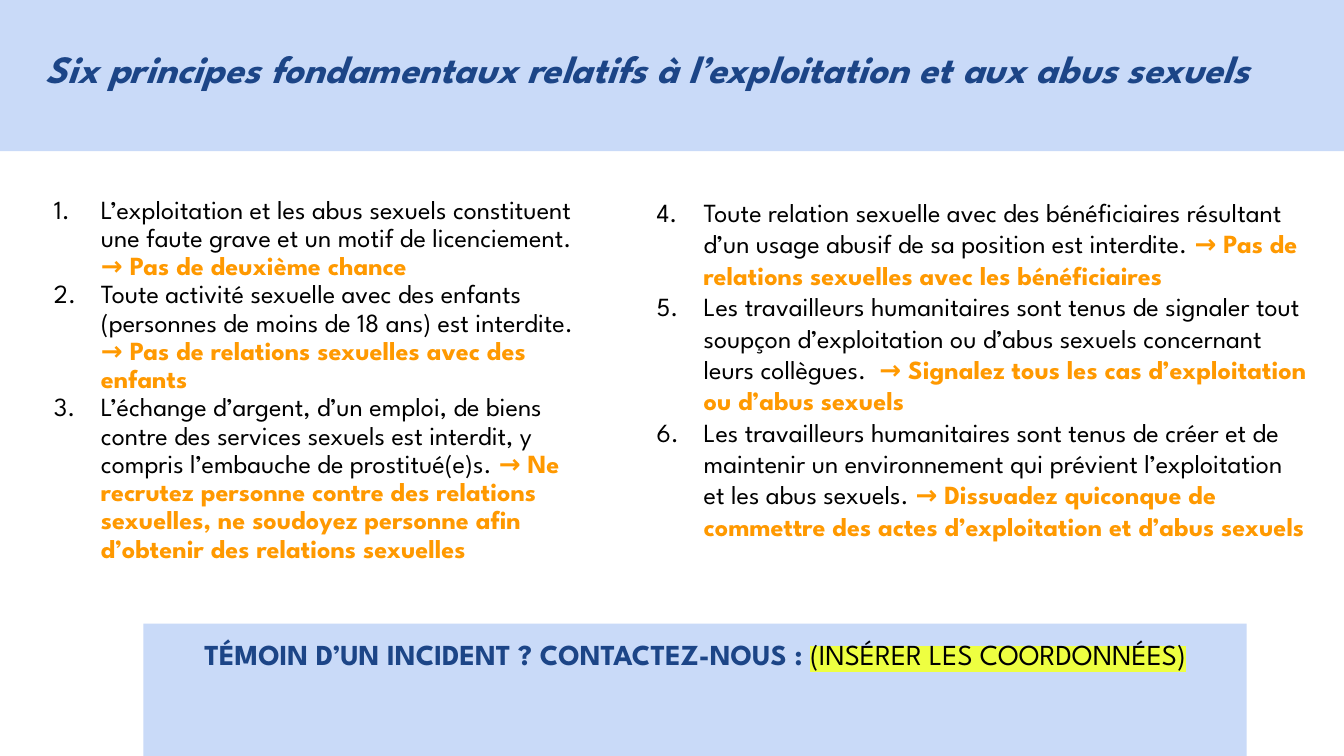
from lxml.etree import SubElement
from pptx import Presentation
from pptx.dml.color import RGBColor
from pptx.enum.shapes import MSO_SHAPE
from pptx.enum.text import MSO_ANCHOR, PP_ALIGN
from pptx.oxml.ns import qn
from pptx.util import Emu, Inches, Pt

W = Inches(10)
H = Emu(W * 9 // 16)
FONT = "League Spartan"
COLORS = {"band": "C9DAF8", "navy": "1C4587", "text": "000000",
          "rule": "FF9900", "marker": "EEFF41"}

LEFT = [
    ("L’exploitation et les abus sexuels constituent une faute grave et un motif de licenciement. ",
     "→ Pas de deuxième chance"),
    ("Toute activité sexuelle avec des enfants (personnes de moins de 18 ans) est interdite. ",
     "→ Pas de relations sexuelles avec des enfants"),
    ("L’échange d’argent, d’un emploi, de biens contre des services sexuels est interdit, "
     "y compris l’embauche de prostitué(e)s. ",
     "→ Ne recrutez personne contre des relations sexuelles, ne soudoyez personne "
     "afin d’obtenir des relations sexuelles"),
]
RIGHT = [
    ("Toute relation sexuelle avec des bénéficiaires résultant d’un usage abusif "
     "de sa position est interdite. ",
     "→ Pas de relations sexuelles avec les bénéficiaires"),
    ("Les travailleurs humanitaires sont tenus de signaler tout soupçon d’exploitation "
     "ou d’abus sexuels concernant leurs collègues.  ",
     "→ Signalez tous les cas d’exploitation ou d’abus sexuels"),
    ("Les travailleurs humanitaires sont tenus de créer et de maintenir un environnement "
     "qui prévient l’exploitation et les abus sexuels. ",
     "→ Dissuadez quiconque de commettre des actes d’exploitation et d’abus sexuels"),
]


def share(x, y, w, h):
    """Turn percentages of the slide's size into a box of lengths."""
    return [Emu(int(part * side / 100)) for part, side in zip((x, y, w, h), (W, H, W, H))]


def set_frame(tf):
    tf.word_wrap = True
    tf.vertical_anchor = MSO_ANCHOR.TOP
    tf.margin_left = tf.margin_right = tf.margin_top = tf.margin_bottom = Inches(0.1)
    return tf


def add_band(s, box):
    sp = s.shapes.add_shape(MSO_SHAPE.RECTANGLE, *box)
    sp.shadow.inherit = False
    sp.fill.solid()
    sp.fill.fore_color.rgb = RGBColor.from_string(COLORS["band"])
    sp.line.fill.background()
    return sp


def add_run(p, text, color, size, bold=False):
    r = p.add_run()
    r.text = text
    r.font.size, r.font.bold, r.font.name = Pt(size), bold, FONT
    r.font.color.rgb = RGBColor.from_string(COLORS[color])
    return r


def highlight(r, color):
    rPr = r.font._element
    mark = SubElement(rPr, qn("a:highlight"))
    SubElement(mark, qn("a:srgbClr"), val=COLORS[color])
    rPr.find(qn("a:solidFill")).addnext(mark)


def number(p, start):
    pPr = p._p.get_or_add_pPr()
    pPr.set("marL", str(Inches(0.5)))
    pPr.set("indent", str(Inches(-0.35)))
    SubElement(SubElement(pPr, qn("a:buClr")), qn("a:srgbClr"), val=COLORS["text"])
    SubElement(pPr, qn("a:buFont"), typeface=FONT)
    SubElement(pPr, qn("a:buAutoNum"), type="arabicPeriod", startAt=str(start))


def add_header(s, box, title):
    x, y, w, h = box
    add_band(s, box)
    tb = s.shapes.add_textbox(x + int(w * 0.024), y + int(h * 0.22),
                              int(w * 0.93), int(h * 0.55))
    p = set_frame(tb.text_frame).paragraphs[0]
    add_run(p, title, "navy", 20.7, bold=True).font.italic = True


def add_principles(s, box, items, start, spacing):
    tf = set_frame(s.shapes.add_textbox(*box).text_frame)
    for i, (principle, rule) in enumerate(items):
        p = tf.add_paragraph() if i else tf.paragraphs[0]
        p.line_spacing = spacing
        number(p, start)
        add_run(p, principle, "text", 14)
        add_run(p, rule, "rule", 14, bold=True)


def add_contact(s, box, question, details):
    p = set_frame(add_band(s, box).text_frame).paragraphs[0]
    p.alignment = PP_ALIGN.CENTER
    add_run(p, question, "navy", 15.5, bold=True)
    highlight(add_run(p, details, "text", 15.5), "marker")


def main():
    prs = Presentation()
    prs.slide_width, prs.slide_height = W, H
    s = prs.slides.add_slide(prs.slide_layouts[6])
    add_header(s, share(0, -0.3, 100.2, 20.3),
               "Six principes fondamentaux relatifs à l’exploitation et aux abus sexuels")
    add_contact(s, share(10.67, 82.5, 82.1, 17.5),
                "TÉMOIN D’UN INCIDENT ? CONTACTEZ-NOUS : ", "(INSÉRER LES COORDONNÉES)")
    add_principles(s, share(1.53, 24.2, 43.7, 66.5), LEFT, 1, 0.9)
    add_principles(s, share(46.37, 24.2, 52.1, 66.5), RIGHT, 4, 1)
    prs.save("out.pptx")


if __name__ == "__main__":
    main()
